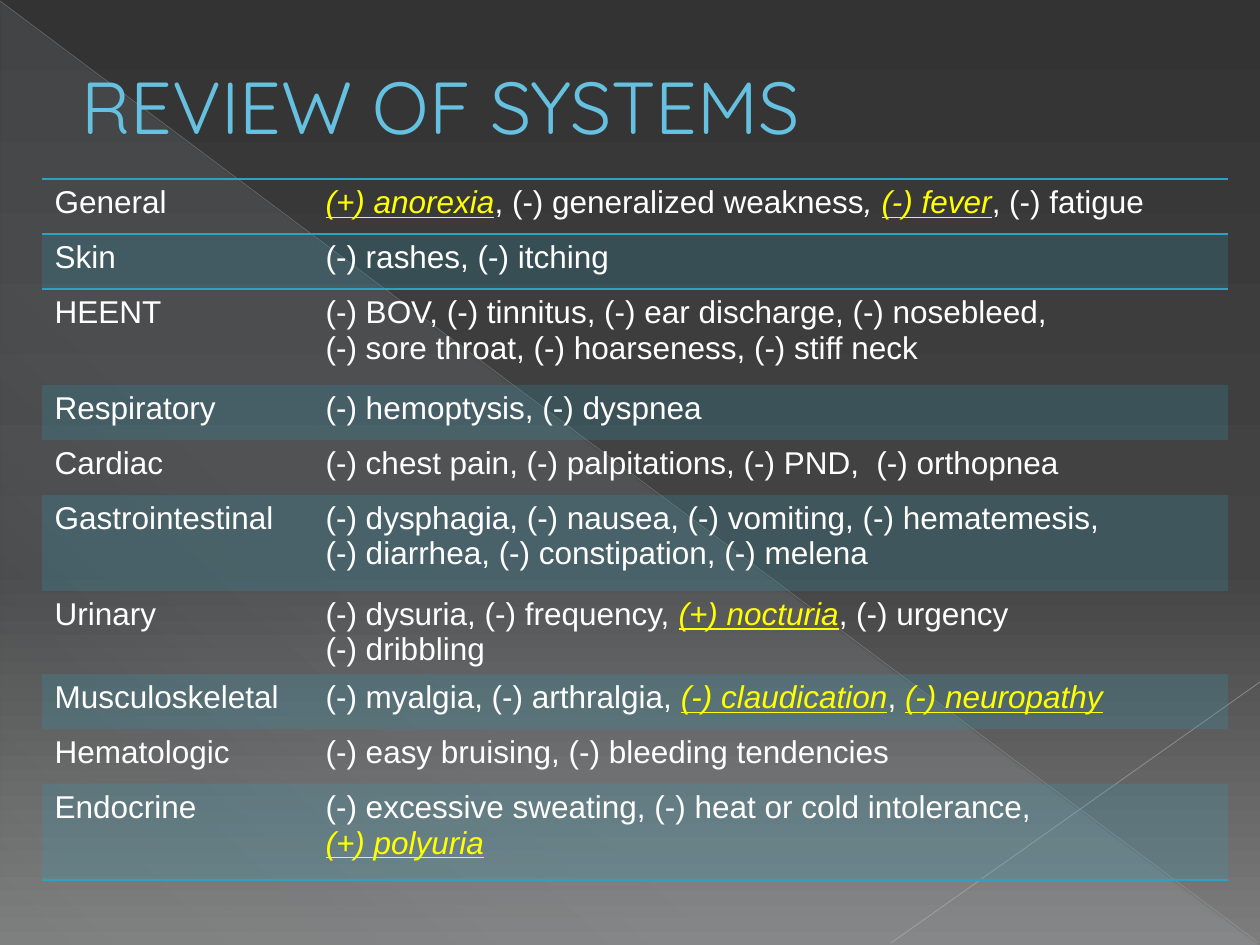
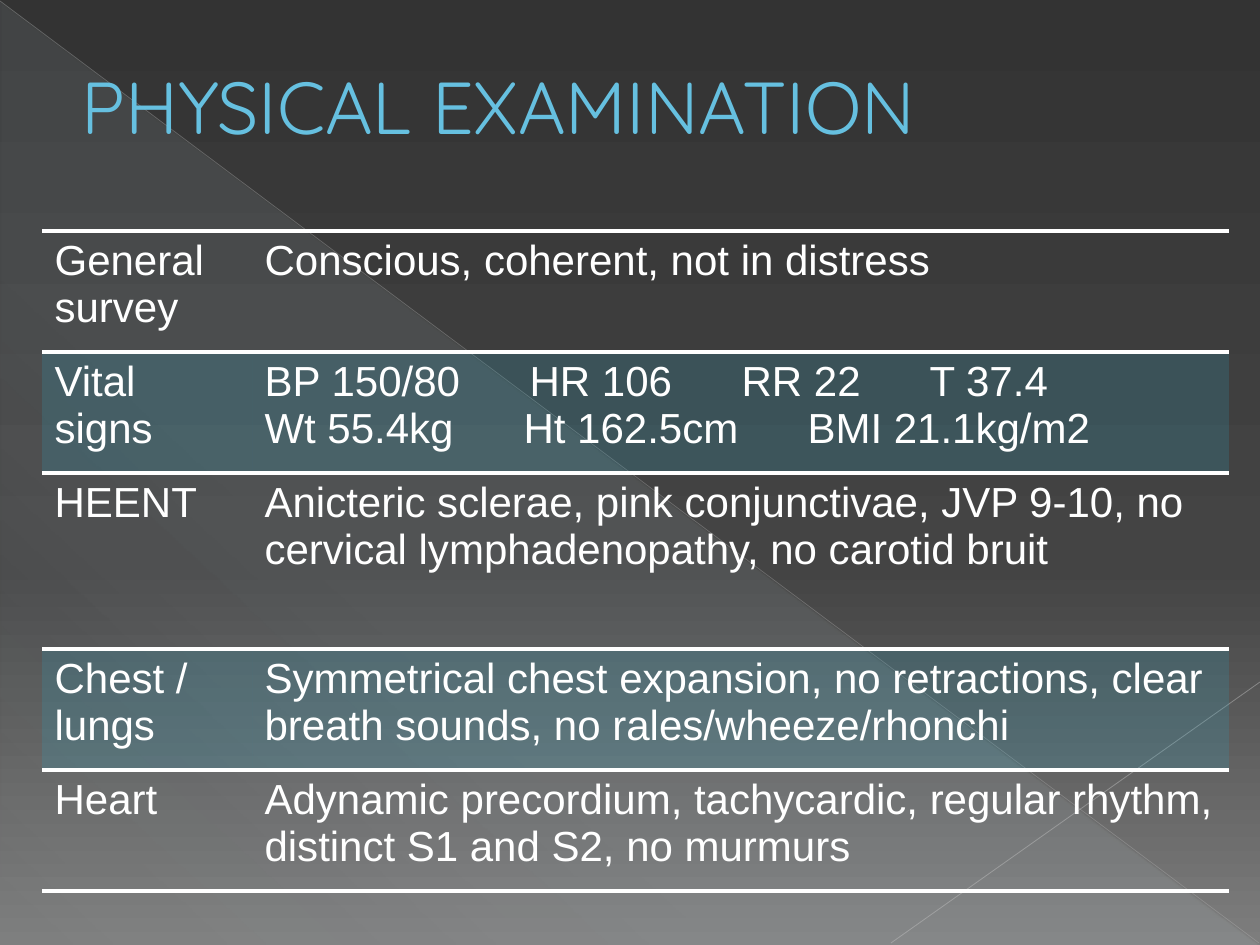
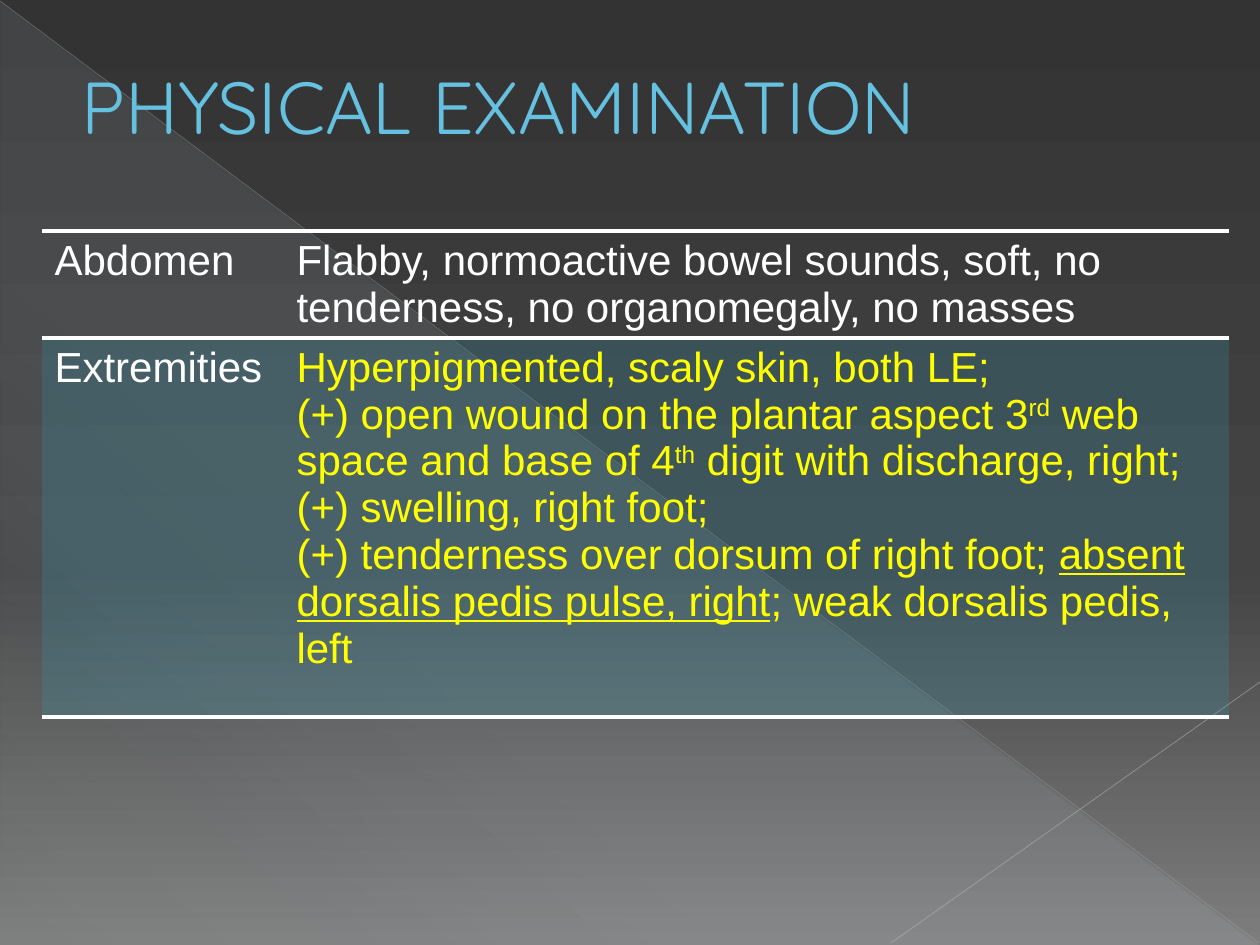
from dataclasses import dataclass

from lxml import etree
from pptx import Presentation
from pptx.dml.color import RGBColor
from pptx.enum.shapes import MSO_CONNECTOR, MSO_SHAPE
from pptx.enum.text import MSO_ANCHOR, MSO_AUTO_SIZE, PP_ALIGN
from pptx.oxml.ns import qn
from pptx.util import Emu, Pt

STRAIGHT = MSO_CONNECTOR.STRAIGHT
RIGHT_TRIANGLE = MSO_SHAPE.RIGHT_TRIANGLE
MIDDLE = MSO_ANCHOR.MIDDLE
NO_AUTOFIT = MSO_AUTO_SIZE.NONE
LEFT = PP_ALIGN.LEFT

WHITE = RGBColor(0xFF, 0xFF, 0xFF)
YELLOW = RGBColor(0xFF, 0xFF, 0x00)
TEAL = RGBColor(0x2D, 0xA2, 0xBF)
SKY = RGBColor(0x66, 0xC0, 0xE0)
DEEP_TEAL = RGBColor(0x1F, 0x70, 0x84)
ICE = RGBColor(0xDE, 0xF5, 0xFA)
CHARCOAL = RGBColor(0x33, 0x33, 0x33)
GRAPHITE = RGBColor(0x44, 0x44, 0x44)
GREY = RGBColor(0x7D, 0x7D, 0x7D)
SILVER = RGBColor(0xB9, 0xB9, 0xB9)
PALE_SILVER = RGBColor(0xC1, 0xC1, 0xC1)

TITLE_FONT, BODY_FONT = "Quicksand", "Arial"
PLAIN_TABLE_STYLE = "{2D5ABB26-0587-4C30-8999-92F81FD0307C}"
BAND_OPACITY = 20

# Gradient stops: position %, colour, opacity %
BACKDROP = [(0, CHARCOAL, 100), (60, GRAPHITE, 100), (100, GREY, 100)]
SHEEN = [(0, ICE, 10), (70, ICE, 8), (100, ICE, 1)]
# Start, end, colour, width in points, opacity %
DIAGONALS = [
    ((0, 1), (1259, 943), SILVER, 0.39, 35),
    ((1260, 682), (891, 943), PALE_SILVER, 0.47, 45),
]

# Run styles
FINDING = {"color": YELLOW, "italic": True, "underline": True}
ITALIC = {"italic": True}
ALERT = {"color": YELLOW}
ALERT_UNDERLINED = {"color": YELLOW, "underline": True}
ALERT_RAISED = {"color": YELLOW, "baseline": 30}


@dataclass
class Tabbed:
    text: str
    stops: tuple


# Each row is a label followed by paragraphs; a paragraph is a string, a Tabbed,
# or a list of runs, where a run is a string or (text, style).
SYSTEMS = [
    ("General", [("(+) anorexia", FINDING), ", (-) generalized weakness", (", ", ITALIC),
                 ("(-) fever", FINDING), ", (-) fatigue"]),
    ("Skin", "(-) rashes, (-) itching"),
    ("HEENT", "(-) BOV, (-) tinnitus, (-) ear discharge, (-) nosebleed,",
     "(-) sore throat, (-) hoarseness, (-) stiff neck"),
    ("Respiratory", "(-) hemoptysis, (-) dyspnea"),
    ("Cardiac", "(-) chest pain, (-) palpitations, (-) PND,  (-) orthopnea"),
    ("Gastrointestinal", "(-) dysphagia, (-) nausea, (-) vomiting, (-) hematemesis,",
     "(-) diarrhea, (-) constipation, (-) melena"),
    ("Urinary", ["(-) dysuria, (-) frequency, ", ("(+) nocturia", FINDING), ", (-) urgency"],
     "(-) dribbling"),
    ("Musculoskeletal", ["(-) myalgia, (-) arthralgia, ", ("(-) claudication", FINDING), ", ",
                         ("(-) neuropathy", FINDING)]),
    ("Hematologic", "(-) easy bruising, (-) bleeding tendencies"),
    ("Endocrine", "(-) excessive sweating, (-) heat or cold intolerance,",
     [("(+) polyuria", FINDING)]),
]
UPPER_BODY = [
    ("General survey", "Conscious, coherent, not in distress"),
    ("Vital signs", Tabbed("BP 150/80\tHR 106\tRR 22\tT 37.4", (265, 477, 665)),
     Tabbed("Wt 55.4kg\tHt 162.5cm\tBMI 21.1kg/m2", (259, 543))),
    ("HEENT", "Anicteric sclerae, pink conjunctivae, JVP 9-10, no cervical "
              "lymphadenopathy, no carotid bruit"),
    ("Chest / lungs", "Symmetrical chest expansion, no retractions, clear breath sounds, "
                      "no rales/wheeze/rhonchi"),
    ("Heart", "Adynamic precordium, tachycardic, regular rhythm, distinct S1 and S2, "
              "no murmurs"),
]
LOWER_BODY = [
    ("Abdomen", "Flabby, normoactive bowel sounds, soft, no tenderness, no organomegaly, "
                "no masses"),
    ("Extremities",
     [("Hyperpigmented, scaly skin, both LE;", ALERT)],
     [("(+) open wound on the plantar aspect 3", ALERT), ("rd", ALERT_RAISED),
      (" web space and base of 4", ALERT), ("th", ALERT_RAISED),
      (" digit with discharge, right;", ALERT)],
     [("(+) swelling, right foot;", ALERT)],
     [("(+) tenderness over dorsum of right foot; ", ALERT),
      ("absent dorsalis pedis pulse, right", ALERT_UNDERLINED),
      ("; weak dorsalis pedis, left", ALERT)]),
]

# "rules" lists the row boundaries that carry a line, counted from the table's top
SLIDES = [
    {"title": "REVIEW OF SYSTEMS", "rows": SYSTEMS, "top": 179, "columns": (271, 915),
     "heights": (55, 55, 96, 55, 55, 96, 83, 55, 55, 96), "size": 18,
     "rules": (0, 1, 10), "rule_color": TEAL, "rule_width": 1},
    {"title": "PHYSICAL EXAMINATION", "rows": UPPER_BODY, "top": 231, "columns": (210, 977),
     "heights": (121, 121, 176, 121, 121), "size": 24,
     "rules": range(6), "rule_color": WHITE, "rule_width": 2.25},
    {"title": "PHYSICAL EXAMINATION", "rows": LOWER_BODY, "top": 231, "columns": (242, 945),
     "heights": (107, 379), "size": 24,
     "rules": range(3), "rule_color": WHITE, "rule_width": 2.25},
]
TABLE_LEFT = 42


def px(length):
    return Emu(round(length * 914400 / 126))


def set_alpha(element, percent):
    for color in element.iter(qn("a:srgbClr")):
        etree.SubElement(color, qn("a:alpha"), val=str(percent * 1000))


def add_solid(parent, color):
    solid = etree.SubElement(parent, qn("a:solidFill"))
    etree.SubElement(solid, qn("a:srgbClr"), val=str(color))


def set_gradient(fill, owner, stops, angle):
    """Give the fill inside the owner element these stops, turned clockwise by angle."""
    fill.gradient()
    gradient = next(owner.iter(qn("a:gradFill")))
    stop_list = gradient.find(qn("a:gsLst"))
    stop_list.clear()
    for position, color, opacity in stops:
        stop = etree.SubElement(stop_list, qn("a:gs"), pos=str(position * 1000))
        etree.SubElement(stop, qn("a:srgbClr"), val=str(color))
        set_alpha(stop, opacity)
    gradient.find(qn("a:lin")).set("ang", str(angle * 60000))


def decorate_layout(layout, slide):
    """Draw the shared backdrop on the slide, then move it behind the layout's placeholders."""
    set_gradient(layout.background.fill, layout.element, BACKDROP, 90)

    sheen = slide.shapes.add_shape(RIGHT_TRIANGLE, px(1), px(2), px(1257), px(943))
    sheen.shadow.inherit = False
    sheen.line.fill.background()
    set_gradient(sheen.fill, sheen.element, SHEEN, 133)
    backdrop = [sheen]

    for start, end, color, width, opacity in DIAGONALS:
        diagonal = slide.shapes.add_connector(STRAIGHT, *map(px, start + end))
        diagonal.line.color.rgb = color
        diagonal.line.width = Pt(width)
        set_alpha(diagonal.element, opacity)
        etree.SubElement(diagonal.element.spPr, qn("a:effectLst"))
        backdrop.append(diagonal)

    for order, part in enumerate(backdrop):
        part.element.xpath("./*/p:cNvPr")[0].set("id", str(20 + order))
        layout.shapes.element.insert(2 + order, part.element)


def add_title(slide, text):
    title = slide.shapes.title
    title.left, title.top, title.width, title.height = map(px, (53, 32, 1134, 147))
    frame = title.text_frame
    frame.auto_size = NO_AUTOFIT
    frame.vertical_anchor = MIDDLE
    heading = frame.paragraphs[0]
    heading.alignment = LEFT
    properties = heading._p.get_or_add_pPr()
    properties.set("marL", str(px(16)))
    properties.set("indent", "0")
    run = add_run(heading, text, 42, TITLE_FONT, SKY)
    outline = etree.Element(qn("a:ln"), w=str(Pt(0.5)))
    add_solid(outline, DEEP_TEAL)
    run._r.get_or_add_rPr().insert(0, outline)


def add_run(paragraph, text, size, font=BODY_FONT, color=WHITE,
            italic=False, underline=False, baseline=0):
    run = paragraph.add_run()
    run.text = text
    run.font.name = font
    run.font.size = Pt(size)
    run.font.color.rgb = color
    run.font.bold = False
    run.font.italic = italic
    run.font.underline = underline
    if baseline:
        run._r.get_or_add_rPr().set("baseline", str(baseline * 1000))
    return run


def fill_paragraph(paragraph, content, size):
    if isinstance(content, Tabbed):
        tabs = etree.SubElement(paragraph._p.get_or_add_pPr(), qn("a:tabLst"))
        for stop in content.stops:
            etree.SubElement(tabs, qn("a:tab"), pos=str(px(stop)), algn="l")
        content = content.text
    for run in [content] if isinstance(content, str) else content:
        text, style = (run, {}) if isinstance(run, str) else run
        add_run(paragraph, text, size, **style)


def add_rule(cell, side, color, width):
    rule = etree.SubElement(cell._tc.get_or_add_tcPr(), qn(f"a:{side}"), w=str(Pt(width)))
    add_solid(rule, color)


def add_findings(slide, spec):
    """Add the table of findings, with every second row tinted."""
    rows, columns, heights = spec["rows"], spec["columns"], spec["heights"]
    frame = slide.shapes.add_table(len(rows), len(columns), px(TABLE_LEFT), px(spec["top"]),
                                   px(sum(columns)), px(sum(heights)))
    table = frame.table
    table.first_row = table.horz_banding = False
    next(frame.element.iter(qn("a:tableStyleId"))).text = PLAIN_TABLE_STYLE
    for column, width in zip(table.columns, columns):
        column.width = px(width)

    for number, (label, *findings) in enumerate(rows):
        table.rows[number].height = px(heights[number])
        for cell, paragraphs in zip(table.rows[number].cells, ([label], findings)):
            for side, boundary in (("lnT", number), ("lnB", number + 1)):
                if boundary in spec["rules"]:
                    add_rule(cell, side, spec["rule_color"], spec["rule_width"])
            if number % 2:
                cell.fill.solid()
                cell.fill.fore_color.rgb = TEAL
                set_alpha(cell._tc.tcPr.find(qn("a:solidFill")), BAND_OPACITY)
            else:
                cell.fill.background()
            text = cell.text_frame
            for order, content in enumerate(paragraphs):
                paragraph = text.add_paragraph() if order else text.paragraphs[0]
                fill_paragraph(paragraph, content, spec["size"])


def main():
    deck = Presentation()
    deck.slide_width, deck.slide_height = px(1260), px(945)
    title_only = deck.slide_layouts[5]
    for number, spec in enumerate(SLIDES):
        slide = deck.slides.add_slide(title_only)
        if number == 0:
            decorate_layout(title_only, slide)
        add_title(slide, spec["title"])
        add_findings(slide, spec)
    deck.save("out.pptx")


if __name__ == "__main__":
    main()
